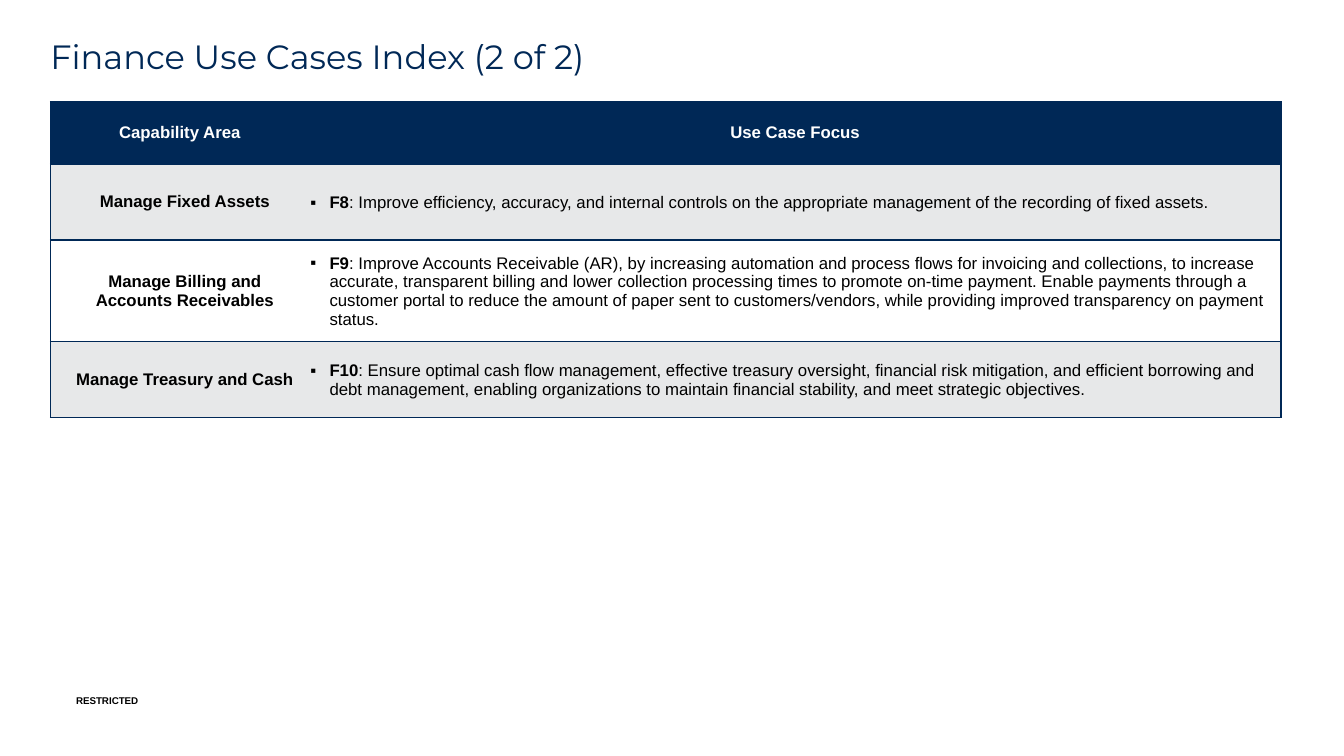
from lxml.etree import SubElement
from pptx import Presentation
from pptx.dml.color import RGBColor
from pptx.enum.text import MSO_ANCHOR, PP_ALIGN
from pptx.oxml.ns import qn
from pptx.util import Pt

TITLE = "Finance Use Cases Index (2 of 2)"
MARKING = "RESTRICTED"
HEADERS = ("Capability Area", "Use Case Focus")
USE_CASES = [
    ("Manage Fixed Assets", "F8",
     "Improve efficiency, accuracy, and internal controls on the appropriate "
     "management of the recording of fixed assets."),
    ("Manage Billing and Accounts Receivables", "F9",
     "Improve Accounts Receivable (AR), by increasing automation and process flows "
     "for invoicing and collections, to increase accurate, transparent billing and "
     "lower collection processing times to promote on-time payment. Enable payments "
     "through a customer portal to reduce the amount of paper sent to "
     "customers/vendors, while providing improved transparency on payment status."),
    ("Manage Treasury and Cash", "F10",
     "Ensure optimal cash flow management, effective treasury oversight, financial "
     "risk mitigation, and efficient borrowing and debt management, enabling "
     "organizations to maintain financial stability, and meet strategic objectives."),
]

NAVY = RGBColor(0x00, 0x28, 0x56)
GREY = RGBColor(0xE7, 0xE8, 0xE9)
WHITE = RGBColor(0xFF, 0xFF, 0xFF)
BLACK = RGBColor(0x00, 0x00, 0x00)
COLUMN_WIDTHS = (185, 694)
ROW_HEIGHTS = (44.5, 54.2, 72.8, 54.2)
LEFT_EDGES, RIGHT_EDGES = ("L", "T", "B"), ("R", "T", "B")


def style_font(font, name, size, color, bold=False):
    font.name, font.size, font.bold = name, Pt(size), bold
    font.color.rgb = color


def add_text(slide, text, left, top, width, height, anchor):
    box = slide.shapes.add_textbox(Pt(left), Pt(top), Pt(width), Pt(height))
    frame = box.text_frame
    frame.word_wrap = True
    frame.vertical_anchor = anchor
    frame.margin_left = frame.margin_right = frame.margin_top = frame.margin_bottom = 0
    frame.text = text
    return frame.paragraphs[0]


def set_borders(cell, edges):
    """Draw the given edges in navy and clear the others."""
    properties = cell._tc.get_or_add_tcPr()
    for edge in "LRTB":
        line = SubElement(properties, qn(f"a:ln{edge}"), w=str(Pt(1)))
        if edge in edges:
            fill = SubElement(line, qn("a:solidFill"))
            SubElement(fill, qn("a:srgbClr"), val=str(NAVY))
        else:
            SubElement(line, qn("a:noFill"))


def prepare_cell(cell, edges, color):
    set_borders(cell, edges)
    cell.fill.solid()
    cell.fill.fore_color.rgb = color
    cell.vertical_anchor = MSO_ANCHOR.MIDDLE
    return cell.text_frame.paragraphs[0]


def set_indent(para, left, first=0, bullet=None):
    properties = para._p.get_or_add_pPr()
    properties.set("marL", str(Pt(left)))
    properties.set("indent", str(Pt(first)))
    if bullet:
        SubElement(properties, qn("a:buFont"), typeface="Arial")
        SubElement(properties, qn("a:buChar"), char=bullet)


def fill_label(cell, text, background, color, indent=0):
    para = prepare_cell(cell, LEFT_EDGES if indent else RIGHT_EDGES, background)
    para.text = text
    para.alignment = PP_ALIGN.CENTER
    set_indent(para, indent)
    style_font(para.runs[0].font, "Arial", 12, color, True)


def fill_focus(cell, code, focus, background):
    para = prepare_cell(cell, RIGHT_EDGES, background)
    cell.margin_left = cell.margin_right = cell.margin_top = Pt(0.7)
    cell.margin_bottom = 0
    set_indent(para, 13.7, -13.7, "▪")
    para.space_after = Pt(6)
    for text, bold in ((code, True), (f": {focus}", False)):
        span = para.add_run()
        span.text = text
        style_font(span.font, "Arial", 12, BLACK, bold)


def add_index_table(slide):
    frame = slide.shapes.add_table(len(ROW_HEIGHTS), len(COLUMN_WIDTHS), Pt(36), Pt(72.7),
                                   Pt(sum(COLUMN_WIDTHS)), Pt(sum(ROW_HEIGHTS)))
    table = frame.table
    for column, width in zip(table.columns, COLUMN_WIDTHS):
        column.width = Pt(width)
    for row, height in zip(table.rows, ROW_HEIGHTS):
        row.height = Pt(height)
    for index, header in enumerate(HEADERS):
        fill_label(table.cell(0, index), header, NAVY, WHITE, 0 if index else 0.01)
    for index, (area, code, focus) in enumerate(USE_CASES, start=1):
        background = GREY if index % 2 else WHITE
        fill_label(table.cell(index, 0), area, background, BLACK, 7.2)
        fill_focus(table.cell(index, 1), code, focus, background)


def main():
    deck = Presentation()
    deck.slide_width, deck.slide_height = Pt(960), Pt(540)
    slide = deck.slides.add_slide(deck.slide_layouts[6])

    marking = add_text(slide, MARKING, 54.3, 496, 337, 8.7, MSO_ANCHOR.BOTTOM)
    style_font(marking.runs[0].font, "Arial", 7, BLACK, True)

    title = add_text(slide, TITLE, 36, 28.8, 888, 41.8, MSO_ANCHOR.TOP)
    title.line_spacing = 0.9
    style_font(title.runs[0].font, "Montserrat", 24, NAVY)

    add_index_table(slide)
    deck.save("out.pptx")


if __name__ == "__main__":
    main()
